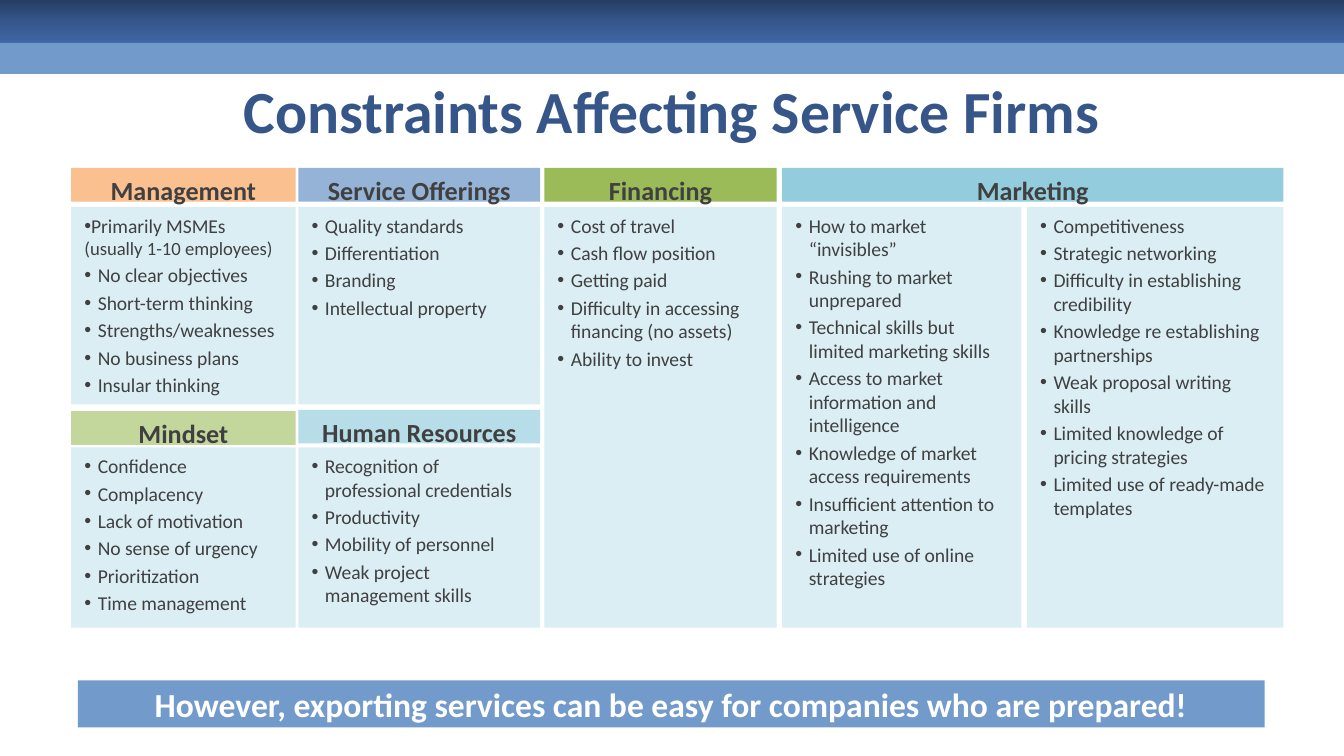
import copy
import dataclasses
import typing

import pptx
import pptx.dml.color
import pptx.enum.shapes
import pptx.enum.text
import pptx.oxml
import pptx.oxml.ns
import pptx.util

Inches, Pt = pptx.util.Inches, pptx.util.Pt
ALIGN, ANCHOR = pptx.enum.text.PP_ALIGN, pptx.enum.text.MSO_ANCHOR
qn = pptx.oxml.ns.qn

WIDTH = 10
HEIGHT = WIDTH * 9 / 16
COLORS = {
    "title": "36568A", "text": "404040", "white": "FFFFFF",
    "band_dark": "263D62", "band_mid": "35568B", "band_light": "3F67A5",
    "banner": "729ACA", "panel": "DBEEF4", "orange": "FAC090",
    "blue": "95B3D7", "green": "9BBB59", "teal": "93CDDD",
    "pale_green": "C3D69B", "pale_teal": "B7DEE8",
}
FORMATS = {
    "title": {"name": "Calibri", "size": Pt(32), "bold": True},
    "heading": {"name": "Calibri", "size": Pt(14), "bold": True},
    "item": {"name": "Calibri", "size": Pt(10.5), "bold": False},
    "detail": {"name": "Calibri", "size": Pt(10), "bold": False},
    "banner": {"name": "Calibri", "size": Pt(18), "bold": True},
}
# Start and end of each grid track, in inches
COLS = [(0.53, 2.2), (2.22, 4.02), (4.05, 5.78), (5.82, 7.6), (7.64, 9.55)]
ROWS = [(1.25, 1.5), (1.54, 3.01), (3.05, 3.3), (3.33, 4.67)]


class Box(typing.NamedTuple):
    left: float
    top: float
    width: float
    height: float


@dataclasses.dataclass
class Heading:
    text: str
    color: str
    col: int
    row: int = 0
    col_span: int = 1
    drop: float = 0  # inches below the row's start


@dataclasses.dataclass
class Panel:
    items: list[str]
    col: int
    row: int = 1
    row_span: int = 1
    lead: tuple[str, str] | None = None  # opening item and its smaller detail


HEADINGS = [
    Heading("Management", "orange", 0),
    Heading("Service Offerings", "blue", 1),
    Heading("Financing", "green", 2),
    Heading("Marketing", "teal", 3, col_span=2),
    Heading("Mindset", "pale_green", 0, row=2, drop=0.01),
    Heading("Human Resources", "pale_teal", 1, row=2),
]
PANELS = [
    Panel(["No clear objectives", "Short-term thinking", "Strengths/weaknesses",
           "No business plans", "Insular thinking"], 0,
          lead=("Primarily MSMEs ", "(usually 1-10 employees)")),
    Panel(["Quality standards", "Differentiation", "Branding",
           "Intellectual property"], 1),
    Panel(["Confidence", "Complacency", "Lack of motivation",
           "No sense of urgency", "Prioritization", "Time management"], 0, row=3),
    Panel(["Recognition of professional credentials", "Productivity",
           "Mobility of personnel", "Weak project management skills"], 1, row=3),
    Panel(["Cost of travel", "Cash flow position", "Getting paid",
           "Difficulty in accessing financing (no assets)",
           "Ability to invest"], 2, row_span=3),
    Panel(["How to market “invisibles”", "Rushing to market unprepared",
           "Technical skills but limited marketing skills",
           "Access to market information and intelligence",
           "Knowledge of market access requirements",
           "Insufficient attention to marketing",
           "Limited use of online strategies"], 3, row_span=3),
    Panel(["Competitiveness", "Strategic networking",
           "Difficulty in establishing credibility",
           "Knowledge re establishing partnerships",
           "Weak proposal writing skills",
           "Limited knowledge of pricing strategies",
           "Limited use of ready-made templates"], 4, row_span=3),
]


def rgb(name: str) -> pptx.dml.color.RGBColor:
    return pptx.dml.color.RGBColor.from_string(COLORS[name])


def grid_box(col: int, row: int, col_span: int = 1, row_span: int = 1) -> Box:
    left, right = COLS[col][0], COLS[col + col_span - 1][1]
    top, bottom = ROWS[row][0], ROWS[row + row_span - 1][1]
    return Box(left, top, right - left, bottom - top)


def add_rect(s, box: Box, color: str):
    sp = s.shapes.add_shape(pptx.enum.shapes.MSO_SHAPE.RECTANGLE,
                            *(Inches(v) for v in box))
    sp.shadow.inherit = False
    sp.line.fill.background()
    sp.fill.solid()
    sp.fill.fore_color.rgb = rgb(color)
    sp.text_frame.word_wrap = True
    sp.text_frame.vertical_anchor = ANCHOR.TOP
    return sp


def add_run(p, text: str, style: str, color: str = "text") -> None:
    r = p.add_run()
    r.text = text
    for key, value in FORMATS[style].items():
        setattr(r.font, key, value)
    r.font.color.rgb = rgb(color)


def add_bullet(p, margin: float) -> None:
    """Hang a round bullet 0.1 inch before the text margin."""
    pPr = p._p.get_or_add_pPr()
    pPr.set("marL", str(Inches(margin)))
    pPr.set("indent", str(Inches(-0.1)))
    for tag in ('buFont {} typeface="Arial"', 'buChar {} char="•"'):
        xml = tag.format(pptx.oxml.ns.nsdecls("a"))
        pPr.append(pptx.oxml.parse_xml(f"<a:{xml}/>"))


def add_line(sp, text: str, style: str, color: str = "text") -> None:
    p = sp.text_frame.paragraphs[0]
    p.alignment = ALIGN.CENTER
    add_run(p, text, style, color)


def draw_heading(s, heading: Heading) -> None:
    box = grid_box(heading.col, heading.row, heading.col_span)
    box = box._replace(top=box.top + heading.drop)
    add_line(add_rect(s, box, heading.color), heading.text, "heading")


def draw_panel(s, panel: Panel) -> None:
    box = grid_box(panel.col, panel.row, row_span=panel.row_span)
    tf = add_rect(s, box, "panel").text_frame
    entries = [(item,) for item in panel.items]
    if panel.lead:
        entries.insert(0, panel.lead)
    for i, entry in enumerate(entries):
        p = tf.add_paragraph() if i else tf.paragraphs[0]
        add_bullet(p, 0.1 if len(entry) == 1 else 0)
        p.alignment = ALIGN.LEFT
        if i:
            p.space_before = Pt(2.1)
        for text, style in zip(entry, ("item", "detail")):
            add_run(p, text, style)


def draw_bands(s) -> None:
    top = add_rect(s, Box(0, 0, WIDTH, 0.32), "band_dark")
    top.fill.gradient()
    top.fill.gradient_angle = 270
    stops = top._element.spPr.find(".//" + qn("a:gsLst"))
    stops.insert(1, copy.deepcopy(stops[0]))
    names = ("band_dark", "band_mid", "band_light")
    for stop, name, position in zip(top.fill.gradient_stops, names, (0, 0.5, 1)):
        stop.color.rgb = rgb(name)
        stop.position = position
    add_rect(s, Box(0, 0.32, WIDTH, 0.23), "banner")


def draw_title(s, text: str) -> None:
    sp = s.shapes.title
    sp.left, sp.top, sp.width, sp.height = (
        Inches(v) for v in Box(0.05 * WIDTH, 0.1 * HEIGHT, 0.9 * WIDTH, 0.5))
    sp.text_frame.auto_size = pptx.enum.text.MSO_AUTO_SIZE.NONE
    sp.text_frame.vertical_anchor = ANCHOR.MIDDLE
    add_line(sp, text, "title", "title")


def draw_banner(s, text: str) -> None:
    sp = add_rect(s, Box(0.58, 0.9 * HEIGHT, 8.83, 0.35), "banner")
    tf = sp.text_frame
    tf.vertical_anchor = ANCHOR.MIDDLE
    tf.margin_left = tf.margin_right = Inches(0.05)
    tf.margin_top = tf.margin_bottom = Inches(0.03)
    add_line(sp, text, "banner", "white")


def main() -> None:
    prs = pptx.Presentation()
    prs.slide_width, prs.slide_height = Inches(WIDTH), Inches(HEIGHT)
    s = prs.slides.add_slide(prs.slide_layouts[5])
    draw_bands(s)
    draw_title(s, "Constraints Affecting Service Firms")
    for panel in PANELS:
        draw_panel(s, panel)
    for heading in HEADINGS:
        draw_heading(s, heading)
    draw_banner(s, "However, exporting services can be easy for companies "
                   "who are prepared!")
    prs.save("out.pptx")


if __name__ == "__main__":
    main()
